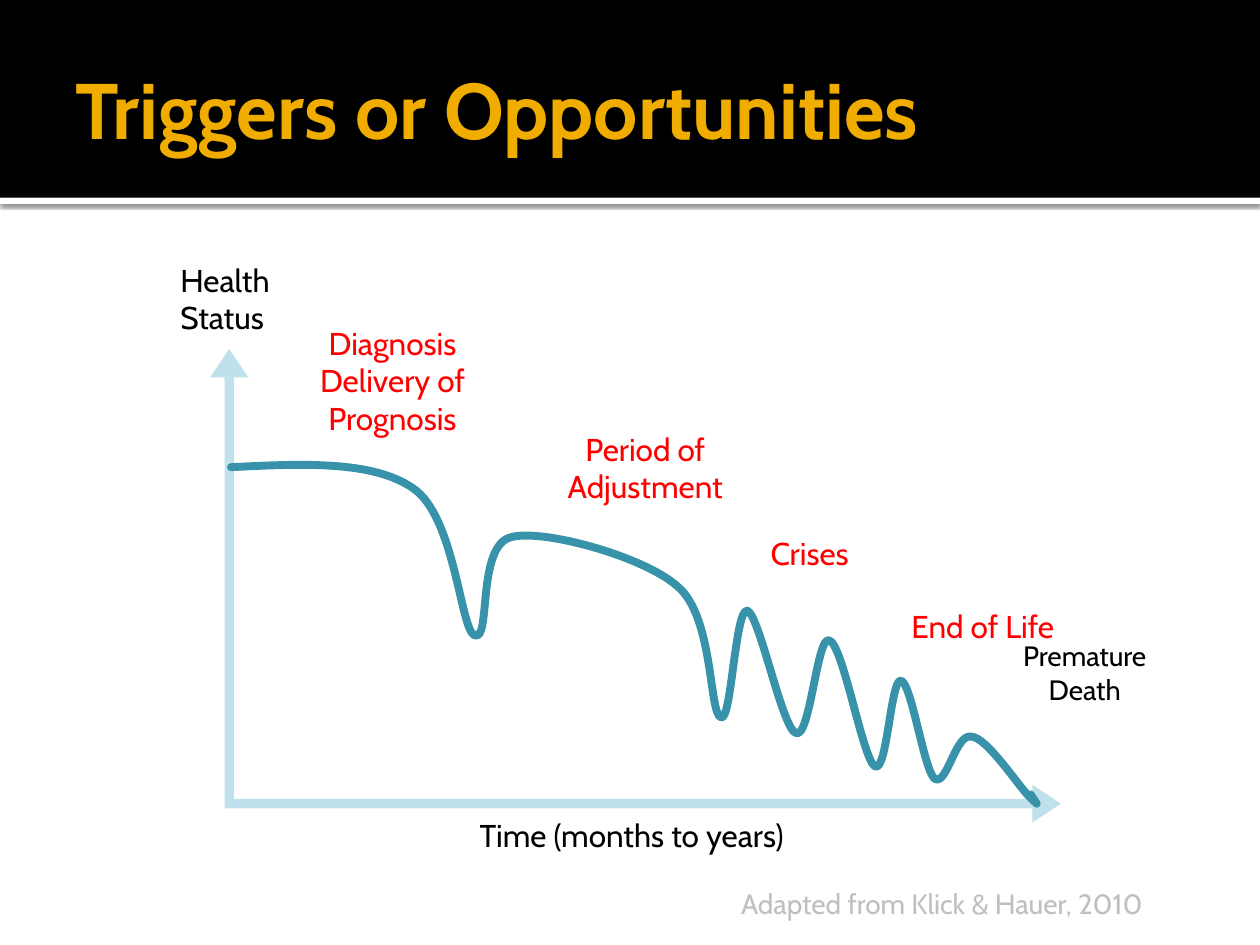
from collections import namedtuple

from lxml import etree
from pptx import Presentation
from pptx.dml.color import RGBColor
from pptx.enum.shapes import MSO_SHAPE
from pptx.enum.text import MSO_ANCHOR, MSO_AUTO_SIZE, PP_ALIGN
from pptx.oxml.ns import qn
from pptx.util import Pt

RECTANGLE, AXES_ARROW = MSO_SHAPE.RECTANGLE, MSO_SHAPE.LEFT_UP_ARROW
LEFT, CENTER, RIGHT = PP_ALIGN.LEFT, PP_ALIGN.CENTER, PP_ALIGN.RIGHT
TOP, MIDDLE = MSO_ANCHOR.TOP, MSO_ANCHOR.MIDDLE
GROW = MSO_AUTO_SIZE.SHAPE_TO_FIT_TEXT

BLACK = RGBColor(0x00, 0x00, 0x00)
WHITE = RGBColor(0xFF, 0xFF, 0xFF)
GOLD = RGBColor(0xF0, 0xAD, 0x00)
RED = RGBColor(0xFF, 0x00, 0x00)
GRAY = RGBColor(0xBF, 0xBF, 0xBF)
PALE_BLUE = RGBColor(0xBF, 0xE1, 0xEB)
TEAL = RGBColor(0x37, 0x92, 0xAA)
FONT = "Cabin"

Box = namedtuple("Box", "left top width height")

CURVE_START = (132, 147)
CURVE_SEGMENTS = [
    ((172, 145), (213, 143), (236, 159)),
    ((260, 175), (263, 239), (271, 243)),
    ((281, 248), (272, 192), (292, 187)),
    ((310, 182), (368, 198), (387, 215)),
    ((408, 232), (405, 288), (412, 290)),
    ((418, 293), (420, 228), (427, 229)),
    ((434, 231), (447, 297), (455, 299)),
    ((463, 302), (467, 242), (474, 246)),
    ((482, 249), (493, 314), (500, 318)),
    ((507, 322), (509, 267), (515, 269)),
    ((521, 271), (528, 320), (534, 325)),
    ((541, 330), (546, 299), (555, 301)),
    ((564, 301), (583, 331), (589, 336)),
    ((595, 342), (592, 339), (589, 334)),
]

LABELS = [
    (["Health Status"], Box(96, 25.4, 72, 51), 18, BLACK, LEFT),
    (["Time (months to years)"], Box(267, 343, 192, 29), 18, BLACK, LEFT),
    (["Premature Death"], Box(567.4, 241.4, 105, 46), 16, BLACK, CENTER),
    (["End of Life"], Box(507.6, 223.4, 108, 29), 18, RED, CENTER),
    (["Crises"], Box(423.4, 181.7, 78.5, 29), 18, RED, CENTER),
    (["Diagnosis", "Delivery of Prognosis"], Box(147.6, 61.4, 153.4, 72.7), 18, RED, CENTER),
    (["Period of Adjustment"], Box(315.4, 121.9, 106.6, 51), 18, RED, CENTER),
]


def within(outer, inner):
    return Box(outer.left + inner.left, outer.top + inner.top, inner.width, inner.height)


def add_solid(page, kind, box, color):
    shape = page.shapes.add_shape(kind, *map(Pt, box))
    shape.shadow.inherit = False
    shape.fill.solid()
    shape.fill.fore_color.rgb = color
    shape.line.fill.background()
    return shape


def add_text(page, box, lines, size, color, align, bold=False, anchor=TOP):
    shape = page.shapes.add_textbox(*map(Pt, box))
    frame = shape.text_frame
    frame.word_wrap = True
    frame.vertical_anchor = anchor
    for index, line in enumerate(lines):
        para = frame.add_paragraph() if index else frame.paragraphs[0]
        para.alignment = align
        span = para.add_run()
        span.text = line
        span.font.name = FONT
        span.font.size = Pt(size)
        span.font.bold = bold
        span.font.color.rgb = color
    return frame


def add_drop_shadow(shape):
    effects = shape.element.spPr.find(qn("a:effectLst"))
    shadow = etree.SubElement(effects, qn("a:outerShdw"), blurRad=str(Pt(2.5)),
                              dist=str(Pt(0.8)), dir="5400000", algn="t", rotWithShape="0")
    color = etree.SubElement(shadow, qn("a:srgbClr"), val=str(BLACK))
    etree.SubElement(color, qn("a:alpha"), val="60000")


def bend_segments(shape):
    outline = next(shape.element.iter(qn("a:path")))
    lines = outline.findall(qn("a:lnTo"))
    for first in range(0, len(lines), 3):
        bend = etree.SubElement(outline, qn("a:cubicBezTo"))
        for line in lines[first:first + 3]:
            bend.append(line[0])
            outline.remove(line)


def draw_header(page, box):
    add_drop_shadow(add_solid(page, RECTANGLE, Box(box.left, box.top + box.height, box.width, 3.6), WHITE))
    add_solid(page, RECTANGLE, box, BLACK)
    title = add_text(page, within(box, Box(36, 12.2, 648, 98.6)), ["Triggers or Opportunities"],
                     45, GOLD, LEFT, bold=True, anchor=MIDDLE)
    title.margin_right = Pt(3.6)


def draw_curve(page, box):
    builder = page.shapes.build_freeform(box.left + CURVE_START[0], box.top + CURVE_START[1], scale=Pt(1))
    points = [(box.left + x, box.top + y) for segment in CURVE_SEGMENTS for x, y in segment]
    builder.add_line_segments(points, close=False)
    curve = builder.convert_to_shape()
    bend_segments(curve)
    curve.shadow.inherit = False
    curve.fill.background()
    curve.line.color.rgb = TEAL
    curve.line.width = Pt(4.5)
    curve.element.spPr.find(qn("a:ln")).set("cap", "rnd")


def draw_decline(page, box):
    axes = add_solid(page, AXES_ARROW, within(box, Box(120.2, 79.4, 486, 270.7)), PALE_BLUE)
    axes.element.spPr.find(qn("a:xfrm")).set("flipH", "1")
    for index, value in enumerate((0.02, 0.04, 0.06)):
        axes.adjustments[index] = value
    draw_curve(page, box)
    for lines, place, size, color, align in LABELS:
        add_text(page, within(box, place), lines, size, color, align).auto_size = GROW


def draw_credit(page, box):
    add_text(page, box, ["Adapted from Klick & Hauer, 2010"], 16, GRAY, RIGHT).auto_size = GROW


def main():
    deck = Presentation()
    deck.slide_width, deck.slide_height = Pt(720), Pt(540)
    page = deck.slides.add_slide(deck.slide_layouts[6])
    draw_header(page, Box(0, 0, 720, 113))
    draw_decline(page, Box(0, 120, 720, 380))
    draw_credit(page, Box(12.2, 503.3, 648, 26.6))
    deck.save("out.pptx")


if __name__ == "__main__":
    main()
